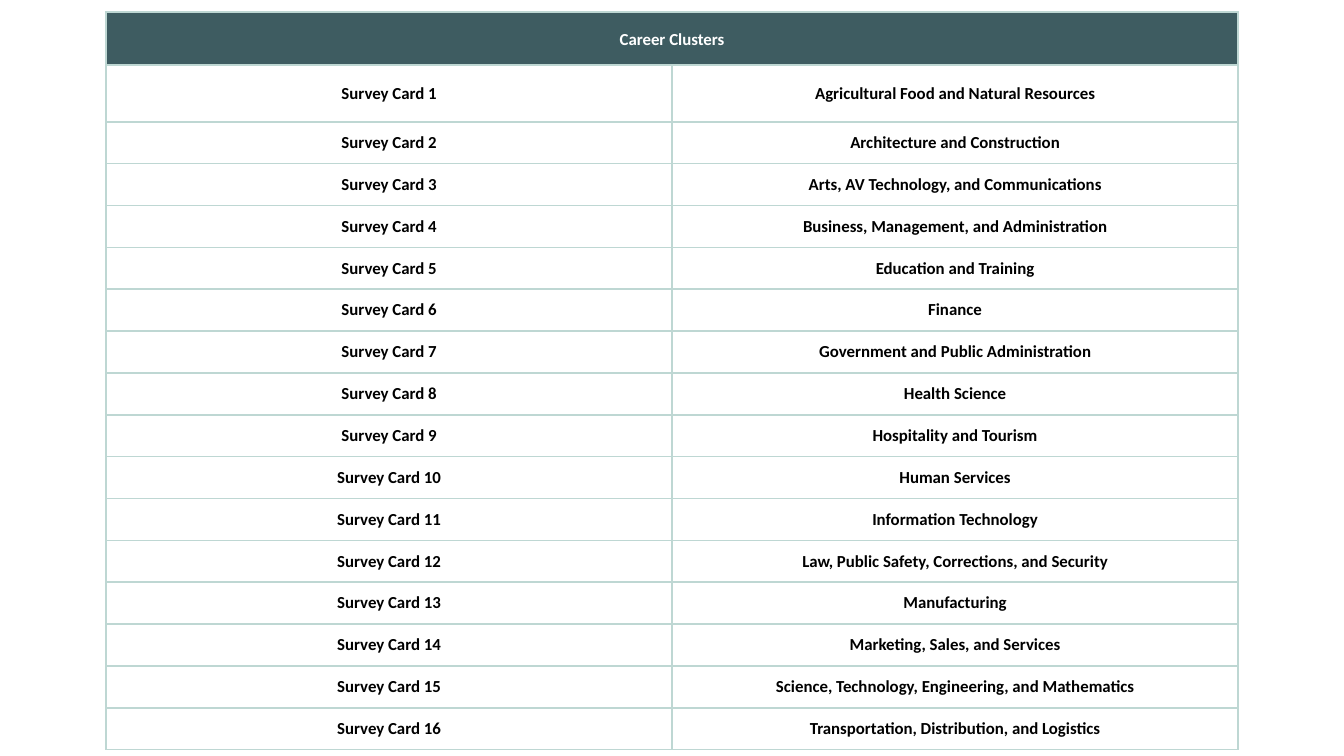
from lxml import etree
from pptx import Presentation
from pptx import util as u
from pptx.dml import color
from pptx.enum import text
from pptx.oxml import ns

HEADER_FILL, CARD_FILL, BORDER = "3E5C61", "FFFFFF", "BED7D3"
HEADER_TEXT, CARD_TEXT = "FFFFFF", "000000"
HEADER_HEIGHT, FIRST_HEIGHT, ROW_HEIGHT = 28.4, 30.5, 22.43
INSET = 5.72

CLUSTERS = [
    "Agricultural Food and Natural Resources",
    "Architecture and Construction",
    "Arts, AV Technology, and Communications",
    "Business, Management, and Administration",
    "Education and Training",
    "Finance",
    "Government and Public Administration",
    "Health Science",
    "Hospitality and Tourism",
    "Human Services",
    "Information Technology",
    "Law, Public Safety, Corrections, and Security",
    "Manufacturing",
    "Marketing, Sales, and Services",
    "Science, Technology, Engineering, and Mathematics",
    "Transportation, Distribution, and Logistics",
]


def paint(target, value):
    """Give a font or a fill a solid colour."""
    fill = target.fill if hasattr(target, "fill") else target
    fill.solid()
    fill.fore_color.rgb = color.RGBColor.from_string(value)


def add_borders(cell):
    properties = cell._tc.get_or_add_tcPr()
    for index, side in enumerate(("lnL", "lnR", "lnT", "lnB")):
        line = etree.Element(ns.qn(f"a:{side}"), w=str(u.Pt(1)))
        fill = etree.SubElement(line, ns.qn("a:solidFill"))
        etree.SubElement(fill, ns.qn("a:srgbClr"), val=BORDER)
        properties.insert(index, line)


def style_cell(cell, fill):
    cell.margin_left = cell.margin_right = u.Pt(INSET)
    cell.margin_top = cell.margin_bottom = u.Pt(INSET)
    cell.vertical_anchor = text.MSO_ANCHOR.MIDDLE
    paint(cell, fill)
    add_borders(cell)


def write_cell(cell, wording, ink):
    para = cell.text_frame.paragraphs[0]
    para.alignment = text.PP_ALIGN.CENTER
    span = para.add_run()
    span.text = wording
    span.font.name = "Calibri"
    span.font.size = u.Pt(9)
    span.font.bold = True
    paint(span.font, ink)
    return para


def add_cluster_table(page, left, top, width):
    heights = [HEADER_HEIGHT, FIRST_HEIGHT] + [ROW_HEIGHT] * (len(CLUSTERS) - 1)
    frame = page.shapes.add_table(len(heights), 2, u.Pt(left), u.Pt(top),
                                  u.Pt(width), u.Pt(sum(heights)))
    table = frame.table
    for column in table.columns:
        column.width = u.Pt(width / 2)
    for row, height in zip(table.rows, heights):
        row.height = u.Pt(height)

    # Fills, borders and insets
    for index, row in enumerate(table.rows):
        for cell in row.cells:
            style_cell(cell, CARD_FILL if index else HEADER_FILL)

    # Header across both columns
    table.cell(0, 0).merge(table.cell(0, 1))
    heading = write_cell(table.cell(0, 0), "Career Clusters", HEADER_TEXT)
    heading.line_spacing = 1.15
    heading.space_after = u.Pt(6)

    # One row for each survey card
    for number, cluster in enumerate(CLUSTERS, start=1):
        write_cell(table.cell(number, 0), f"Survey Card {number}", CARD_TEXT)
        write_cell(table.cell(number, 1), cluster, CARD_TEXT)


def main():
    deck = Presentation()
    deck.slide_width, deck.slide_height = u.Pt(720), u.Pt(405)
    page = deck.slides.add_slide(deck.slide_layouts[6])
    add_cluster_table(page, left=56.8, top=6.4, width=606.4)
    deck.save("out.pptx")


if __name__ == "__main__":
    main()
